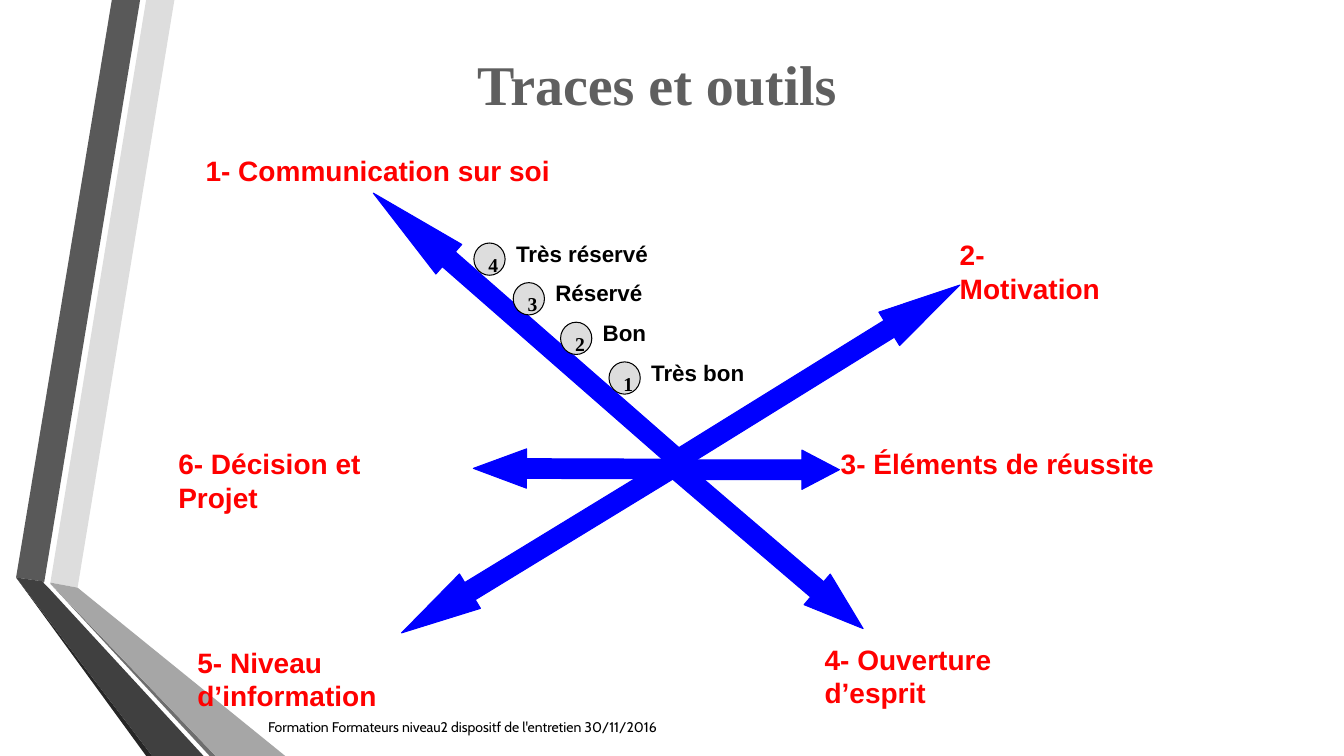
from pptx import Presentation
from pptx.dml.color import RGBColor
from pptx.enum import shapes, text
from pptx.util import Inches, Pt

RED = RGBColor(0xFF, 0, 0)
BLUE = RGBColor(0, 0, 0xFF)
BLACK = RGBColor(0, 0, 0)
TITLE_GREY = RGBColor(0x5F, 0x5F, 0x5F)
LIGHT_GREY = RGBColor(0xDD, 0xDD, 0xDD)

RIBBONS = [
    (LIGHT_GREY, [(0.5, 5.78), (0.77, 5.83), (1.73, 0), (1.45, 0)]),
    (RGBColor(0x59, 0x59, 0x59), [(1.39, 0), (1.11, 0), (0.16, 5.73), (0.44, 5.77)]),
    (RGBColor(0x26, 0x26, 0x26), [(0.16, 5.73), (1.45, 7.5), (1.51, 7.5)]),
    (RGBColor(0x6E, 0x6E, 0x6E), [(0.5, 5.79), (2.08, 7.5), (2.14, 7.5)]),
    (RGBColor(0xA6, 0xA6, 0xA6),
     [(0.5, 5.79), (2.14, 7.5), (2.83, 7.5), (0.77, 5.83), (0.5, 5.78)]),
    (RGBColor(0x40, 0x40, 0x40),
     [(2.02, 7.5), (0.48, 5.83), (0.43, 5.78), (0.44, 5.77), (0.16, 5.73), (1.51, 7.5)]),
]

# left, top, width, height, rotation, head length / width
ARROWS = [
    (7.91, 2.04, 0.39, 3.33, 58.2, 2.115),
    (7.38, 3.91, 0.39, 1.5, 90, 0.954),
    (5.56, 3.59, 0.39, 2.12, 270.2, 1.352),
    (5.02, 1.23, 0.39, 4.02, 311.2, 2.552),
    (7.44, 4.24, 0.4, 2.42, 130.5, 1.498),
    (5.14, 3.86, 0.4, 3.18, 238.6, 1.988),
]

AXES = [
    (1.94, 1.47, 3.86, 0.43, [("1- Communication sur soi", 20)]),
    (9.42, 2.31, 1.75, 0.77, [("2-", 20), (" ", 18), ("Motivation", 20)]),
    (8.24, 4.38, 3.43, 0.43, [("3- Éléments de réussite", 20)]),
    (8.08, 6.32, 2.2, 0.77, [("4- Ouverture d’esprit", 20)]),
    (1.86, 6.35, 2.4, 0.77, [("5- Niveau d’information", 20)]),
    (1.67, 4.38, 2.3, 0.77, [("6- Décision et Projet", 20)]),
]

LEVELS = [
    ("1", "Très bon", 6.04, 1.14),
    ("2", "Bon", 5.56, 0.63),
    ("3", "Réservé", 5.09, 1.06),
    ("4", "Très réservé", 4.7, 1.52),
]
LEVEL_TOP, LEVEL_STEP = 3.59, 0.393

prs = Presentation()
prs.slide_width, prs.slide_height = Inches(13.33), Inches(7.5)
s = prs.slides.add_slide(prs.slide_layouts[6])


def write(tf, runs, font, color, bold=True, align=text.PP_ALIGN.LEFT):
    p = tf.paragraphs[0]
    p.alignment = align
    for words, size in runs:
        r = p.add_run()
        r.text = words
        r.font.name, r.font.size, r.font.bold = font, Pt(size), bold
        r.font.color.rgb = color


def add_text(x, y, w, h, runs, font, color, wrap=True, **style):
    tf = s.shapes.add_textbox(*map(Inches, (x, y, w, h))).text_frame
    tf.word_wrap = wrap
    write(tf, runs, font, color, **style)
    return tf


def paint(sp, fill, line=None):
    sp.shadow.inherit = False
    sp.fill.solid()
    sp.fill.fore_color.rgb = fill
    if line is None:
        sp.line.fill.background()
    else:
        sp.line.color.rgb = line
        sp.line.width = Pt(0.75)


for color, points in RIBBONS:
    corners = [(Inches(x), Inches(y)) for x, y in points]
    outline = s.shapes.build_freeform(*corners[0])
    outline.add_line_segments(corners[1:], close=True)
    paint(outline.convert_to_shape(), color)

for x, y, w, h, rotation, head in ARROWS:
    arrow = s.shapes.add_shape(shapes.MSO_SHAPE.UP_ARROW, *map(Inches, (x, y, w, h)))
    arrow.adjustments[0], arrow.adjustments[1] = 0.5, head
    arrow.rotation = rotation
    paint(arrow, BLUE, BLUE)

for x, y, w, h, runs in AXES:
    add_text(x, y, w, h, runs, "Arial", RED)

for i, (number, label, x, w) in enumerate(LEVELS):
    y = LEVEL_TOP - i * LEVEL_STEP
    badge = s.shapes.add_shape(shapes.MSO_SHAPE.FLOWCHART_CONNECTOR,
                               *map(Inches, (x, y, 0.31, 0.32)))
    paint(badge, LIGHT_GREY, BLACK)
    badge.text_frame.vertical_anchor = text.MSO_ANCHOR.TOP
    write(badge.text_frame, [(number, 14)], "Times New Roman", BLACK)
    add_text(x + 0.32, y - 0.08, w, 0.37, [(label, 16)], "Arial", BLACK, wrap=False)

add_text(2.26, 0.44, 8.51, 0.77, [("Traces et outils", 40)], "Times New Roman",
         TITLE_GREY, align=text.PP_ALIGN.CENTER)
footer = add_text(2.56, 7.01, 7.75, 0.4,
                  [("Formation Formateurs niveau2 dispositf de l'entretien 30/11/2016", 10)],
                  "Cabin", BLACK, bold=False)
footer.vertical_anchor = text.MSO_ANCHOR.MIDDLE

prs.save("out.pptx")
